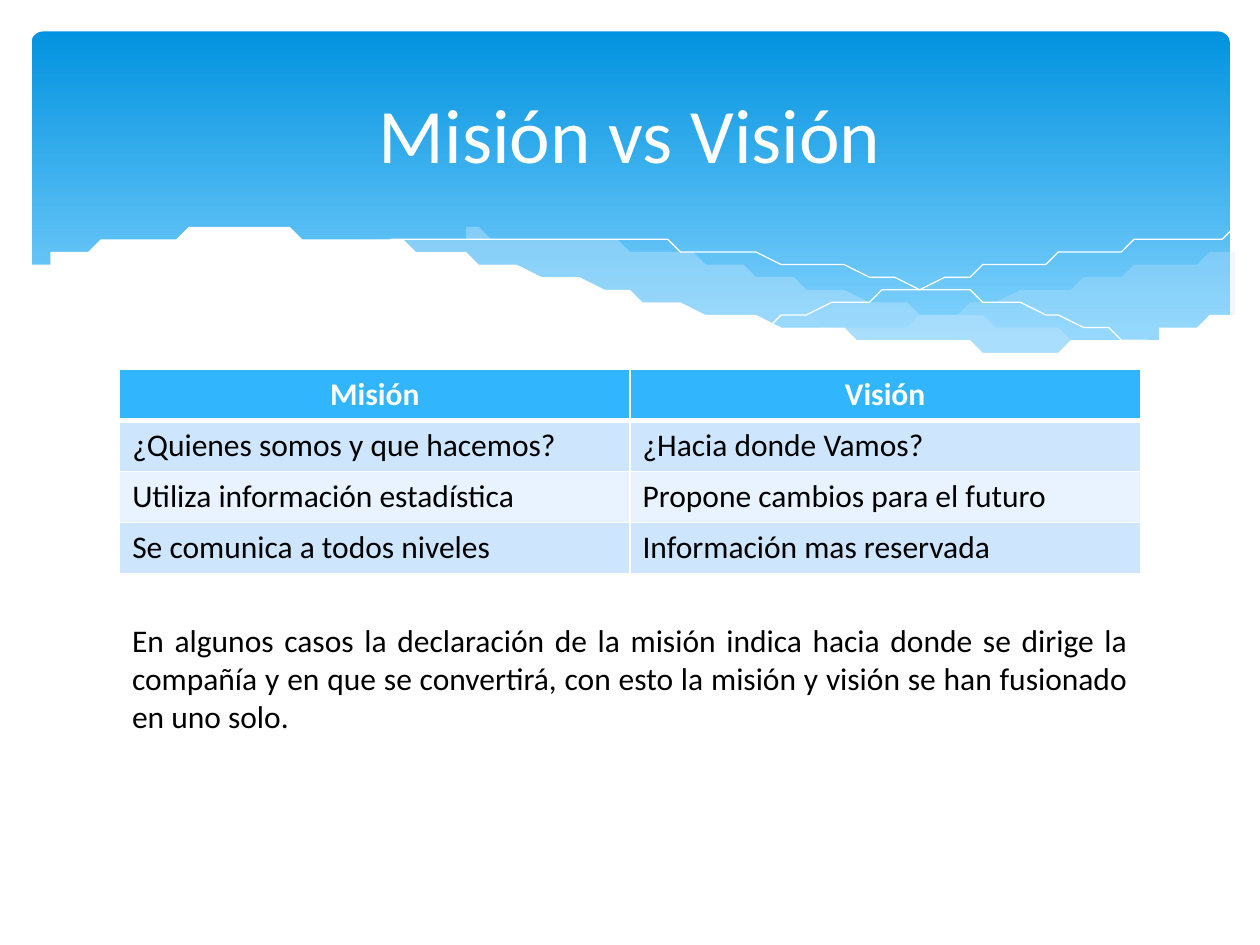
from dataclasses import dataclass
from typing import Optional

from lxml import etree
from pptx import Presentation
from pptx.dml.color import RGBColor
from pptx.enum.shapes import MSO_SHAPE
from pptx.enum.text import MSO_ANCHOR, PP_ALIGN
from pptx.oxml.ns import qn
from pptx.util import Inches, Pt

ROUND_RECT = MSO_SHAPE.ROUNDED_RECTANGLE
MIDDLE = MSO_ANCHOR.MIDDLE
LEFT, CENTER, JUSTIFY = PP_ALIGN.LEFT, PP_ALIGN.CENTER, PP_ALIGN.JUSTIFY

FONT = "Calibri"
COLORS = {
    "white": "FFFFFF", "text": "000000", "sky_top": "0293E0",
    "sky_bottom": "83D3FE", "veil": "C6E7FC", "header": "31B6FD",
    "band_dark": "CEE5FE", "band_light": "E8F3FF",
}
CELL = Inches(0.1)  # the slide is a grid of 100 columns by 75 rows

Point = tuple[float, float]


@dataclass
class Wave:
    """Curved edges joined in order; filled when a fill is given."""
    edges: list[list[Point]]
    fill: Optional[str] = None
    opacity: int = 100


WAVES = [
    # Right-hand veil
    Wave([[(97.6, 20), (92.1, 21), (86.1, 22.3), (77.9, 24.2), (72.9, 25.3),
           (66.1, 26.5)],
          [(66.1, 26.5), (71.9, 27.2), (76.9, 27.7), (81.4, 27.8),
           (85.4, 27.7), (89.7, 27), (93.5, 26.2), (97.6, 24.7)]], "veil", 29),
    # Central veil
    Wave([[(89.3, 27.3), (83.7, 26.5), (77.5, 25.4), (70.6, 24), (62.9, 22.2),
           (56.9, 20.8), (51.4, 19.8), (46.5, 19.1), (42, 18.7), (38, 18.5),
           (34.4, 18.6), (31.3, 18.8), (28.6, 19.1)],
          [(28.6, 19.1), (34.2, 19.9), (40.4, 21.1), (44.9, 22.2), (53, 24),
           (60.1, 25.5), (66.5, 26.6), (72.2, 27.4), (77.3, 27.7),
           (81.8, 27.8), (85.7, 27.7), (89.3, 27.3)]], "veil", 40),
    # Hairlines
    Wave([[(30.9, 19.5), (34.4, 19), (38.7, 18.7), (43.3, 18.7), (48.9, 19),
           (55.6, 19.7), (63.6, 20.8), (72.7, 22.6), (79.5, 24.1),
           (86.9, 26.1), (90.7, 27.2)]]),
    Wave([[(61.3, 25.7), (67.2, 24.1), (74.8, 22.3), (80.6, 21), (86.6, 19.9),
           (92.4, 19), (97.5, 18.5)]]),
    # White foreground
    Wave([[(97.7, 24.6), (94, 25.9), (89.9, 26.9), (85, 27.5), (79.3, 27.6),
           (72.6, 27.2), (66.8, 26.5), (60.3, 25.4), (52.9, 23.9),
           (44.7, 22), (36.5, 20.2), (29.2, 19), (23, 18.5), (17.7, 18.4),
           (13.2, 18.6), (9.5, 19.1), (6.7, 19.7), (4.6, 20.3), (2.3, 21.3)],
          [(2.3, 32.9), (97.7, 32.9)]], "white"),
]

TITLE = "Misión vs Visión"
ROWS = [
    ("Misión", "Visión"),
    ("¿Quienes somos y que hacemos?", "¿Hacia donde Vamos?"),
    ("Utiliza información estadística", "Propone cambios para el futuro"),
    ("Se comunica a todos niveles", "Información mas reservada"),
]
NOTE = ("En algunos casos la declaración de la misión indica hacia donde se "
        "dirige la compañía y en que se convertirá, con esto la misión y "
        "visión se han fusionado en uno solo.")


def rgb(name: str) -> RGBColor:
    return RGBColor.from_string(COLORS[name])


def box(*cells: float) -> list[int]:
    return [round(c * CELL) for c in cells]


def smooth(knots: list[Point], steps: int = 5) -> list[Point]:
    """Catmull-Rom curve through the knots; two knots stay a straight line."""
    if len(knots) < 3:
        return knots
    ext = [knots[0], *knots, knots[-1]]
    pts = [knots[0]]
    for a, b, c, d in zip(ext, ext[1:], ext[2:], ext[3:]):
        for i in range(1, steps + 1):
            t = i / steps
            x, y = (q + t / 2 * (s - p + t * (2 * p - 5 * q + 4 * s - u
                    + t * (3 * (q - s) + u - p)))
                    for p, q, s, u in zip(a, b, c, d))
            pts.append((x, y))
    return pts


def add_wave(slide, wave: Wave) -> None:
    pts = [pt for edge in wave.edges for pt in smooth(edge)]
    fb = slide.shapes.build_freeform(*pts[0], scale=CELL)
    fb.add_line_segments(pts[1:], close=wave.fill is not None)
    sp = fb.convert_to_shape()
    sp.shadow.inherit = False
    if wave.fill is None:
        sp.fill.background()
        sp.line.color.rgb = rgb("white")
        sp.line.width = Pt(0)
        return
    sp.line.fill.background()
    sp.fill.solid()
    sp.fill.fore_color.rgb = rgb(wave.fill)
    if wave.opacity < 100:
        clr = sp._element.spPr.find(".//" + qn("a:srgbClr"))
        etree.SubElement(clr, qn("a:alpha"), val=str(wave.opacity * 1000))


def add_sky(slide) -> None:
    sp = slide.shapes.add_shape(ROUND_RECT, *box(2.5, 2.5, 95.1, 27))
    sp.adjustments[0] = 0.034
    sp.shadow.inherit = False
    sp.line.fill.background()
    sp.fill.gradient()
    sp.fill.gradient_angle = 270
    stops = ((0, "sky_top"), (0.9, "sky_bottom"))
    for stop, (pos, color) in zip(sp.fill.gradient_stops, stops):
        stop.position = pos
        stop.color.rgb = rgb(color)


def write(tf, text: str, size: int, color: str, align, bold=False) -> None:
    p = tf.paragraphs[0]
    p.alignment = align
    r = p.add_run()
    r.text = text
    r.font.name, r.font.size, r.font.bold = FONT, Pt(size), bold
    r.font.color.rgb = rgb(color)


def set_borders(cell, bottom: int, top: int) -> None:
    """White borders; they must come before the cell's fill."""
    tcPr = cell._tc.get_or_add_tcPr()
    widths = {"lnL": 1, "lnR": 1, "lnT": top, "lnB": bottom}
    for i, (tag, width) in enumerate(widths.items()):
        ln = etree.Element(qn(f"a:{tag}"), w=str(Pt(width)))
        fill = etree.SubElement(ln, qn("a:solidFill"))
        etree.SubElement(fill, qn("a:srgbClr"), val=COLORS["white"])
        tcPr.insert(i, ln)


def add_comparison(slide) -> None:
    frame = slide.shapes.add_table(len(ROWS), 2, *box(9.5, 29.3, 81, 16))
    table = frame.table
    table.horz_banding = False
    for i, row in enumerate(ROWS):
        head = i == 0
        band = "header" if head else "band_dark" if i % 2 else "band_light"
        for j, text in enumerate(row):
            cell = table.cell(i, j)
            cell.fill.solid()
            cell.fill.fore_color.rgb = rgb(band)
            set_borders(cell, bottom=3 if head else 1, top=3 if i == 1 else 1)
            write(cell.text_frame, text, 18, "white" if head else "text",
                  CENTER if head else LEFT, bold=head)


def main() -> None:
    prs = Presentation()
    prs.slide_width, prs.slide_height = box(100, 75)
    slide = prs.slides.add_slide(prs.slide_layouts[5])

    # Wavy header
    add_sky(slide)
    for wave in WAVES:
        add_wave(slide, wave)

    add_comparison(slide)

    # Title, brought in front of the header
    title = slide.shapes.title
    title.left, title.top, title.width, title.height = box(5, 3.7, 90, 13.7)
    title.text_frame.vertical_anchor = MIDDLE
    write(title.text_frame, TITLE, 44, "white", CENTER)
    slide.shapes._spTree.append(title._element)

    # Closing note
    note = slide.shapes.add_textbox(*box(9.5, 48.8, 81, 10.1))
    note.text_frame.word_wrap = True
    write(note.text_frame, NOTE, 18, "text", JUSTIFY)

    prs.save("out.pptx")


if __name__ == "__main__":
    main()
